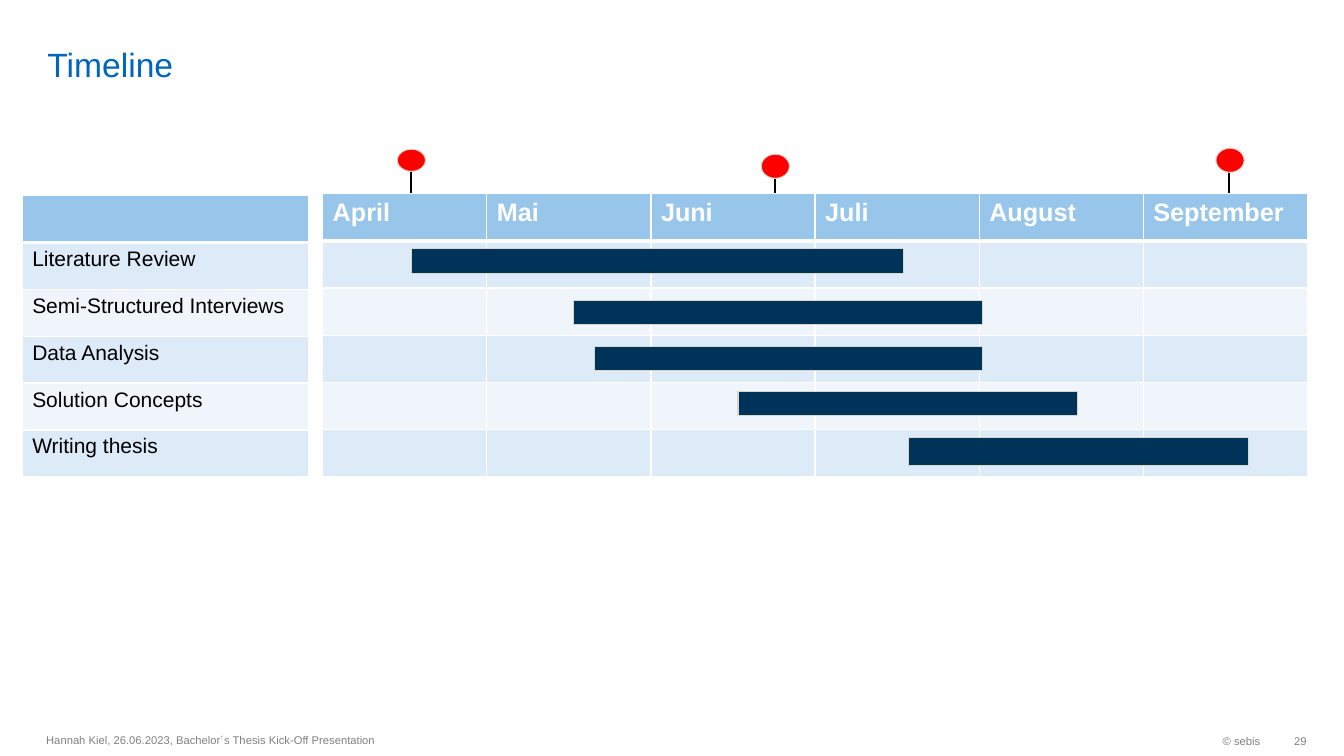
from lxml import etree
from pptx import Presentation
from pptx.dml.color import RGBColor
from pptx.enum.shapes import MSO_CONNECTOR, MSO_SHAPE
from pptx.enum.text import MSO_ANCHOR, MSO_AUTO_SIZE, PP_ALIGN
from pptx.oxml.ns import qn
from pptx.util import Inches, Pt

FONT = "Arial"
WHITE = RGBColor(0xFF, 0xFF, 0xFF)
BLACK = RGBColor(0x00, 0x00, 0x00)
TITLE_BLUE = RGBColor(0x00, 0x65, 0xBD)
FOOTER_GRAY = RGBColor(0x80, 0x80, 0x80)
HEADER_BLUE = RGBColor(0x98, 0xC6, 0xEA)
BAND_DARK = RGBColor(0xDD, 0xEA, 0xF7)
BAND_LIGHT = RGBColor(0xEF, 0xF5, 0xFB)
BAR_NAVY = RGBColor(0x00, 0x33, 0x59)
MILESTONE_RED = RGBColor(0xFF, 0x00, 0x00)
OUTLINE = RGBColor(0xDA, 0xD7, 0xCB)

MONTHS = ["April", "Mai", "Juni", "Juli", "August", "September"]
TASKS = [
    ("Literature Review", (4.08, 2.47, 4.88, 0.24)),
    ("Semi-Structured Interviews", (5.69, 2.98, 4.05, 0.24)),
    ("Data Analysis", (5.9, 3.44, 3.84, 0.24)),
    ("Solution Concepts", (7.32, 3.88, 3.37, 0.24)),
    ("Writing thesis", (9.01, 4.34, 3.37, 0.28)),
]
MILESTONES = [
    (12.19, 1.7, (12.06, 1.47, 0.28, 0.24)),
    (7.69, 1.69, (7.55, 1.53, 0.28, 0.24)),
    (4.08, 1.67, (3.94, 1.48, 0.28, 0.22)),
]
STEM_LENGTH = 2.89


def format_runs(text_frame, size, color, bold=False, alignment=PP_ALIGN.LEFT):
    for paragraph in text_frame.paragraphs:
        paragraph.alignment = alignment
        for run in paragraph.runs:
            run.font.name = FONT
            run.font.size = Pt(size)
            run.font.bold = bold
            run.font.color.rgb = color


def add_title(slide, text):
    title = slide.shapes.title
    title.left, title.top = Inches(0.37), Inches(0.05)
    title.width, title.height = Inches(11.58), Inches(0.79)
    frame = title.text_frame
    frame.text = text
    frame.auto_size = MSO_AUTO_SIZE.NONE
    frame.vertical_anchor = MSO_ANCHOR.BOTTOM
    frame.margin_top = frame.margin_bottom = 0
    format_runs(frame, 24, TITLE_BLUE)


def add_footer(slide, text, box, alignment=PP_ALIGN.LEFT, wrap=True, right_margin=0.1):
    frame = slide.shapes.add_textbox(*map(Inches, box)).text_frame
    frame.text = text
    frame.word_wrap = wrap
    frame.vertical_anchor = MSO_ANCHOR.MIDDLE
    frame.margin_right = Inches(right_margin)
    format_runs(frame, 8, FOOTER_GRAY, alignment=alignment)


def add_borders(cell, bottom_width):
    properties = cell._tc.get_or_add_tcPr()
    for side, width in (("L", 1), ("R", 1), ("T", 1), ("B", bottom_width)):
        line = etree.SubElement(properties, qn(f"a:ln{side}"), w=str(Pt(width)))
        fill = etree.SubElement(line, qn("a:solidFill"))
        etree.SubElement(fill, qn("a:srgbClr"), val=str(WHITE))


def add_grid(slide, rows, box, text_size):
    column_count = len(rows[0])
    table = slide.shapes.add_table(len(rows), column_count, *map(Inches, box)).table
    table.horz_banding = False
    for row_index, texts in enumerate(rows):
        is_header = row_index == 0
        band = BAND_DARK if row_index % 2 else BAND_LIGHT
        for column_index, text in enumerate(texts):
            cell = table.cell(row_index, column_index)
            add_borders(cell, 3 if is_header else 1)
            cell.fill.solid()
            cell.fill.fore_color.rgb = HEADER_BLUE if is_header else band
            cell.text_frame.text = text
            format_runs(cell.text_frame, text_size, WHITE if is_header else BLACK, is_header)


def add_mark(slide, kind, box, color):
    shape = slide.shapes.add_shape(kind, *map(Inches, box))
    shape.shadow.inherit = False
    shape.fill.solid()
    shape.fill.fore_color.rgb = color
    shape.line.color.rgb = OUTLINE
    shape.line.width = Pt(0.75)


def add_stem(slide, x, top):
    stem = slide.shapes.add_connector(
        MSO_CONNECTOR.STRAIGHT, Inches(x), Inches(top), Inches(x), Inches(top + STEM_LENGTH)
    )
    stem.line.color.rgb = BLACK
    stem.line.width = Pt(1.35)
    etree.SubElement(stem._element.spPr, qn("a:effectLst"))


def main():
    presentation = Presentation()
    presentation.slide_width = Inches(13.33)
    presentation.slide_height = Inches(7.5)
    slide = presentation.slides.add_slide(presentation.slide_layouts[5])

    for x, top, _ in MILESTONES:
        add_stem(slide, x, top)
    add_title(slide, "Timeline")
    add_footer(slide, "© sebis", (10.26, 7.19, 2.34, 0.32), PP_ALIGN.RIGHT, False)
    add_footer(
        slide,
        "Hannah Kiel, 26.06.2023, Bachelor´s Thesis Kick-Off Presentation",
        (0.36, 7.18, 6.3, 0.32),
    )
    add_footer(slide, "29", (12.6, 7.19, 0.36, 0.32), PP_ALIGN.RIGHT, False, 0)

    month_rows = [MONTHS] + [[""] * len(MONTHS) for _ in TASKS]
    add_grid(slide, month_rows, (3.2, 1.92, 9.77, 2.81), 18)
    task_rows = [[""]] + [[name] for name, _ in TASKS]
    add_grid(slide, task_rows, (0.22, 1.94, 2.84, 2.79), 15)

    for _, bar in TASKS:
        add_mark(slide, MSO_SHAPE.FLOWCHART_PROCESS, bar, BAR_NAVY)
    for _, _, marker in MILESTONES:
        add_mark(slide, MSO_SHAPE.OVAL, marker, MILESTONE_RED)

    presentation.save("out.pptx")


if __name__ == "__main__":
    main()
